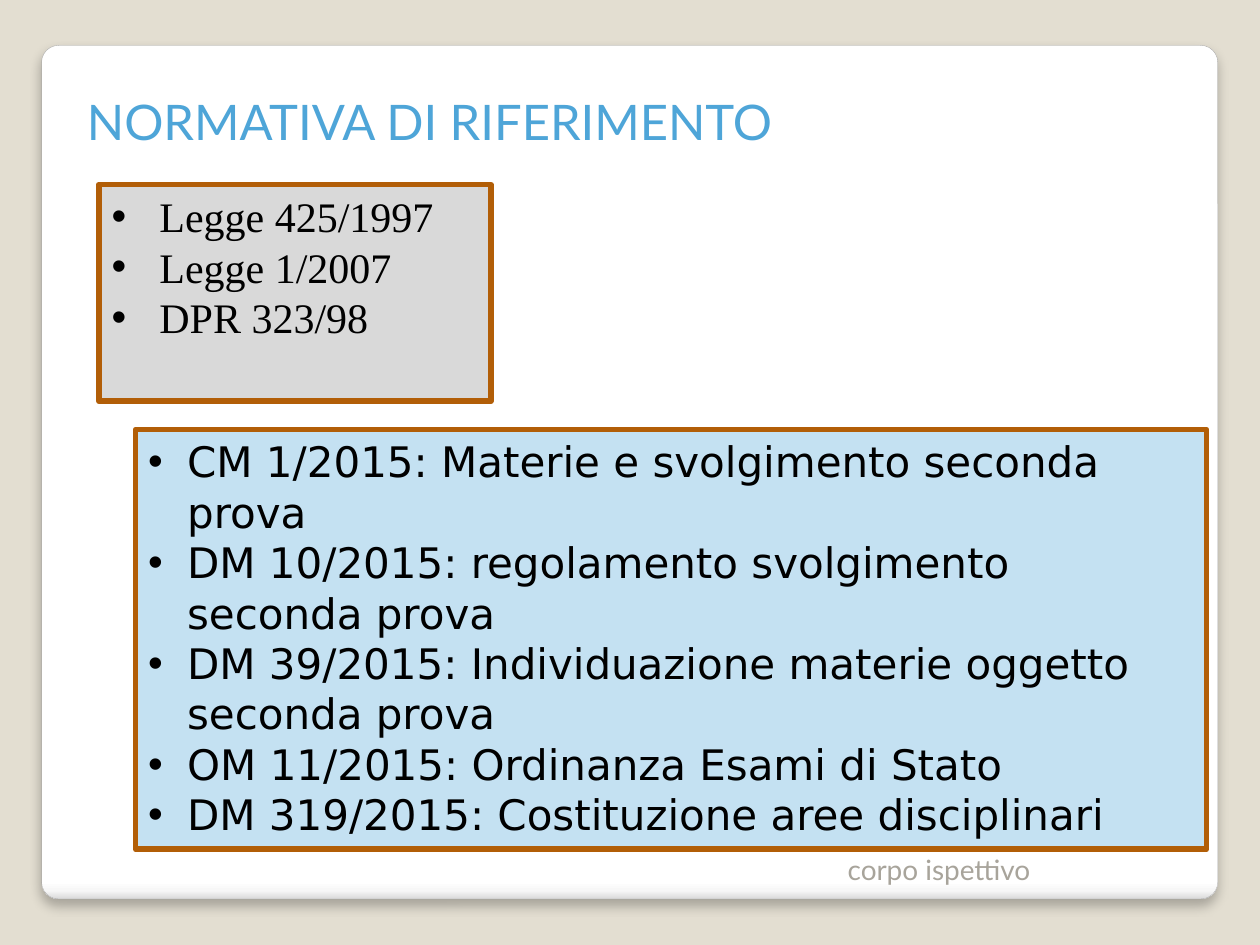
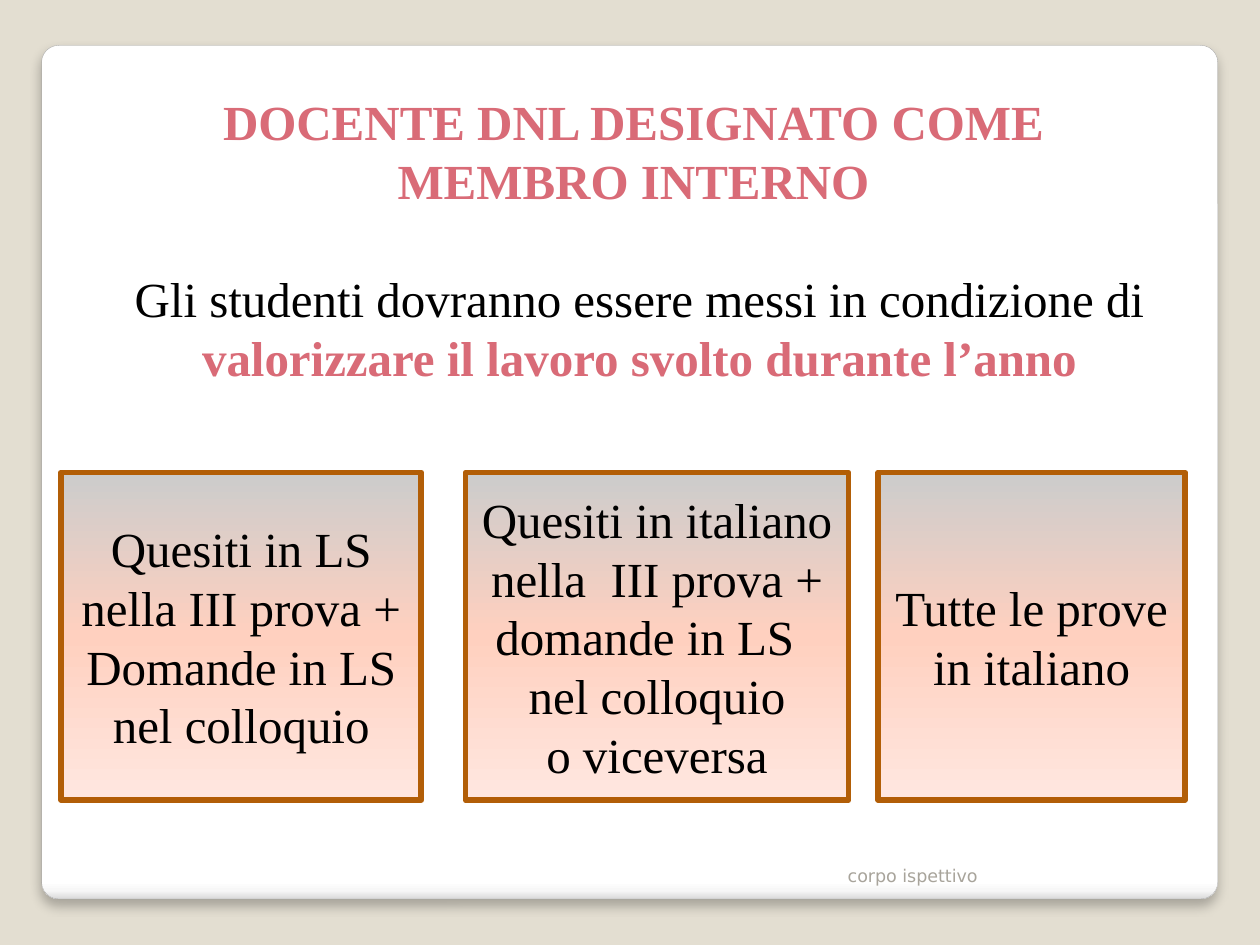
from lxml import etree
from pptx import Presentation
from pptx.dml.color import RGBColor
from pptx.enum.shapes import MSO_SHAPE
from pptx.enum.text import MSO_ANCHOR, MSO_AUTO_SIZE, PP_ALIGN
from pptx.oxml.ns import qn
from pptx.util import Inches, Pt

RECT, ROUND = MSO_SHAPE.RECTANGLE, MSO_SHAPE.ROUNDED_RECTANGLE
TOP, MIDDLE, BOTTOM = MSO_ANCHOR.TOP, MSO_ANCHOR.MIDDLE, MSO_ANCHOR.BOTTOM
LEFT, CENTER = PP_ALIGN.LEFT, PP_ALIGN.CENTER
FIXED = MSO_AUTO_SIZE.NONE

# Shared colours and fonts
SAND = RGBColor(0xE3, 0xDE, 0xD1)
EDGE = RGBColor(0xA4, 0xA4, 0xA4)
BROWN = RGBColor(0xB2, 0x5E, 0x07)
GREY = RGBColor(0xD9, 0xD9, 0xD9)
SKY = RGBColor(0xC4, 0xE1, 0xF2)
BLUE = RGBColor(0x4E, 0xA5, 0xD8)
ROSE = RGBColor(0xD9, 0x6B, 0x77)
STONE = RGBColor(0xA8, 0xA4, 0x9B)
BLACK = RGBColor(0, 0, 0)
WHITE = RGBColor(0xFF, 0xFF, 0xFF)
PANEL = [(0, WHITE), (98, WHITE), (99, RGBColor(0xF7, 0xF7, 0xF7)),
         (100, RGBColor(0xDA, 0xDA, 0xDA))]
PEACH = [(0, RGBColor(0xCC, 0xCC, 0xCC)), (50, RGBColor(0xFF, 0xD0, 0xBF)),
         (100, RGBColor(0xFF, 0xE7, 0xE0))]
SANS, SERIF, WIDE = "Lato", "Times New Roman", "DejaVu Sans"

# Grid: 100 columns by 75 rows of square cells
WIDTH, HEIGHT = Inches(10), Inches(7.5)
CELL = WIDTH / 100
LEAD = 1.2  # line height per text size

LAWS = ["Legge 425/1997", "Legge 1/2007", "DPR 323/98"]
RULES = ["CM 1/2015: Materie e svolgimento seconda prova",
         "DM 10/2015: regolamento svolgimento seconda prova",
         "DM 39/2015: Individuazione materie oggetto seconda prova",
         "OM 11/2015: Ordinanza Esami di Stato",
         "DM 319/2015: Costituzione aree disciplinari"]
# Left column, width in columns, text
CASES = [(4.85, 28.6, ["Quesiti in LS nella III prova +",
                       "Domande in LS nel colloquio"]),
         (36.95, 30.4, ["Quesiti in italiano nella  III prova + "
                        "domande in LS   nel colloquio", "o viceversa"]),
         (69.7, 24.35, ["Tutte le prove in italiano"])]


def cells(*spans):
    return [round(span * CELL) for span in spans]


def assign(item, **vals):
    for name, val in vals.items():
        setattr(item, name, val)


def place(shape, box):
    assign(shape, **dict(zip(("left", "top", "width", "height"), cells(*box))))


def outline(shape, color, width):
    shape.line.color.rgb = color
    shape.line.width = Pt(width)


def paint(shape, color):
    shape.fill.solid()
    shape.fill.fore_color.rgb = color


def blend(shape, stops):
    """Fill from top to bottom with (percent, colour) stops."""
    shape.fill.gradient()
    shape.fill.gradient_angle = 270
    row = shape._element.spPr.find(".//" + qn("a:gsLst"))
    for old in list(row):
        row.remove(old)
    for spot, color in stops:
        stop = etree.SubElement(row, qn("a:gs"), pos=str(spot * 1000))
        etree.SubElement(stop, qn("a:srgbClr"), val=str(color))


def write(shape, paras, size, font, color, bold=False, align=LEFT,
          anchor=TOP, hang=None):
    """Each paragraph is a text or a list of (text, format) runs."""
    frame = shape.text_frame
    assign(frame, word_wrap=True, auto_size=FIXED, vertical_anchor=anchor)
    for i, runs in enumerate(paras):
        para = frame.add_paragraph() if i else frame.paragraphs[0]
        assign(para, alignment=align, line_spacing=Pt(size * LEAD),
               space_before=Pt(0))
        props = para._p.get_or_add_pPr()
        props.set("marL", str(Inches(hang or 0)))
        props.set("indent", str(-Inches(hang or 0)))
        if hang is None:
            etree.SubElement(props, qn("a:buNone"))
        for text, look in [(runs, {})] if isinstance(runs, str) else runs:
            run = para.add_run()
            run.text = text
            form = {"color": color, "bold": bold, **look}
            run.font.color.rgb = form.pop("color")
            assign(run.font, size=Pt(size), name=font, **form)


def add_card(slide):
    """Lay the white card with its soft shadow behind everything."""
    card = slide.shapes.add_shape(ROUND, *cells(3.3, 3.6, 93.35, 67.75))
    card.adjustments[0] = 0.02
    blend(card, PANEL)
    outline(card, EDGE, 0.16)
    card.shadow.inherit = False
    glow = etree.SubElement(
        card._element.spPr.find(qn("a:effectLst")), qn("a:outerShdw"),
        blurRad=str(Pt(6)), dist=str(Pt(4)), dir="5400000", rotWithShape="0")
    tint = etree.SubElement(glow, qn("a:srgbClr"), val=str(BLACK))
    etree.SubElement(tint, qn("a:alpha"), val="25000")
    slide.shapes._spTree.insert(2, card._element)


def add_page(deck, layout):
    slide = deck.slides.add_slide(deck.slide_layouts[layout])
    add_card(slide)
    return slide


def add_title(slide, box, lines, **look):
    place(slide.shapes.title, box)
    write(slide.shapes.title, lines, 28, **look)


def add_list(shape, box, lines, fill, font, hang):
    place(shape, box)
    paint(shape, fill)
    outline(shape, BROWN, 3.25)
    write(shape, lines, 24, font, BLACK, hang=hang)


def add_case(slide, left, width, lines):
    box = slide.shapes.add_shape(RECT, *cells(left, 37.5, width, 26))
    box.shadow.inherit = False
    blend(box, PEACH)
    outline(box, BROWN, 3.35)
    write(box, lines, 28, SERIF, BLACK, align=CENTER, anchor=MIDDLE)


def add_footer(slide, size, font):
    box = slide.shapes.add_textbox(*cells(66.3, 66.8, 25, 4))
    write(box, ["corpo ispettivo"], size, font, STONE, anchor=BOTTOM)


def main():
    deck = Presentation()
    assign(deck, slide_width=WIDTH, slide_height=HEIGHT)
    paint(deck.slide_master.background, SAND)

    # Slide 1: the laws and rules
    slide = add_page(deck, 3)
    add_title(slide, (5.9, 6.8, 89, 5.7), ["NORMATIVA DI RIFERIMENTO"],
              font=SANS, color=BLUE)
    laws, rules = slide.placeholders[1], slide.placeholders[2]
    add_list(laws, (7.85, 14.65, 31.1, 17.2), LAWS, GREY, SERIF, 0.38)
    add_list(rules, (10.75, 34.1, 85, 33.3), RULES, SKY, WIDE, 0.31)
    add_footer(slide, 16, SANS)

    # Slide 2: the three exam cases
    slide = add_page(deck, 1)
    add_title(slide, (7.4, 6.8, 86.7, 10.4),
              ["DOCENTE DNL DESIGNATO COME ", "MEMBRO INTERNO "],
              font=SERIF, color=ROSE, bold=True, align=CENTER)
    body = slide.placeholders[1]
    place(body, (7.4, 20.8, 86.7, 10.4))
    goal = [("Gli studenti dovranno essere messi in condizione di ", {}),
            ("valorizzare il lavoro svolto durante l’anno",
             {"color": ROSE, "bold": True})]
    write(body, [goal], 28, SERIF, BLACK, align=CENTER)
    for case in CASES:
        add_case(slide, *case)
    add_footer(slide, 10, WIDE)

    deck.save("out.pptx")


if __name__ == "__main__":
    main()
